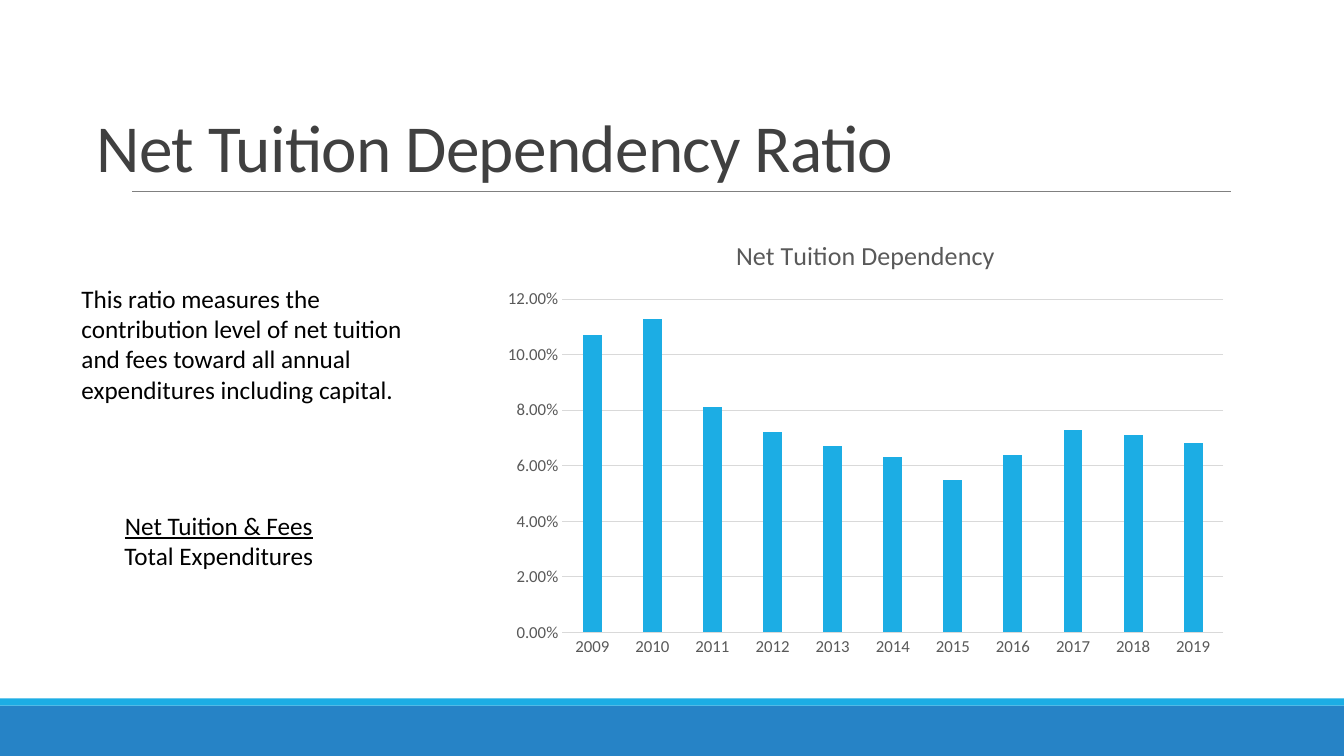
from pptx import Presentation
from pptx.chart.data import CategoryChartData
from pptx.dml.color import RGBColor
from pptx.enum.chart import XL_CHART_TYPE, XL_TICK_MARK
from pptx.enum.shapes import MSO_CONNECTOR, MSO_SHAPE
from pptx.enum.text import MSO_ANCHOR, PP_ALIGN
from pptx.oxml.ns import qn
from pptx.util import Inches, Pt
from lxml.etree import SubElement

BLUE = RGBColor(0x26, 0x83, 0xC6)
CYAN = RGBColor(0x1C, 0xAD, 0xE4)
RULE = RGBColor(0x80, 0x80, 0x80)
GRID = RGBColor(0xD9, 0xD9, 0xD9)
TITLE = RGBColor(0x40, 0x40, 0x40)
LABEL = RGBColor(0x59, 0x59, 0x59)
BLACK = RGBColor(0, 0, 0)


def style(font, size, color):
    font.name = "Calibri"
    font.size = Pt(size)
    font.color.rgb = color
    font.bold = False


def add_text(left, top, width, height, text, size, color):
    sp = s.shapes.add_textbox(Inches(left), Inches(top), Inches(width), Inches(height))
    tf = sp.text_frame
    tf.word_wrap = True
    tf.text = text
    for p in tf.paragraphs:
        style(p.runs[0].font, size, color)
    return tf


prs = Presentation()
prs.slide_width = Inches(13.33)
prs.slide_height = Inches(7.5)
s = prs.slides.add_slide(prs.slide_layouts[6])

for top, height, color in [(7, 0.5, BLUE), (6.93, 0.07, CYAN)]:
    band = s.shapes.add_shape(MSO_SHAPE.RECTANGLE, 0, Inches(top), prs.slide_width, Inches(height))
    band.shadow.inherit = False
    band.fill.solid()
    band.fill.fore_color.rgb = color
    band.line.fill.background()

rule = s.shapes.add_connector(
    MSO_CONNECTOR.STRAIGHT, Inches(1.31), Inches(1.9), Inches(12.21), Inches(1.9))
rule.line.color.rgb = RULE
rule.line.width = Pt(0.5)
SubElement(rule._element.spPr, qn("a:effectLst"))

tf = add_text(0.71, 0.31, 11, 1.59, "Net Tuition Dependency Ratio", 48, TITLE)
tf.vertical_anchor = MSO_ANCHOR.BOTTOM
tf.margin_left = Inches(0.25)
p = tf.paragraphs[0]
p.line_spacing = 0.85
p.runs[0]._r.get_or_add_rPr().set("spc", "-50")

data = CategoryChartData(number_format="0.00%")
data.categories = [str(year) for year in range(2009, 2020)]
data.add_series("Series 1", [0.107, 0.113, 0.081, 0.072, 0.067, 0.063,
                             0.055, 0.064, 0.073, 0.071, 0.068])
chart = s.shapes.add_chart(
    XL_CHART_TYPE.COLUMN_CLUSTERED, Inches(4.89), Inches(2.16),
    Inches(7.39), Inches(4.44), data).chart
style(chart.font, 10, BLACK)
chart.has_legend = False
chart.has_title = True
chart.chart_title.include_in_layout = False
chart.chart_title.text_frame.text = "Net Tuition Dependency"
style(chart.chart_title.text_frame.paragraphs[0].runs[0].font, 18.6, LABEL)

plot = chart.plots[0]
plot.vary_by_categories = False
plot.gap_width = 219
plot.overlap = -27
plot.series[0].format.fill.solid()
plot.series[0].format.fill.fore_color.rgb = CYAN

years, ratios = chart.category_axis, chart.value_axis
for axis in (years, ratios):
    style(axis.tick_labels.font, 12, LABEL)
    axis.major_tick_mark = XL_TICK_MARK.NONE
    axis.minor_tick_mark = XL_TICK_MARK.NONE
ratios.minimum_scale = 0
ratios.maximum_scale = 0.12
ratios.major_unit = 0.02
ratios.tick_labels.number_format = "0.00%"
ratios.tick_labels.number_format_is_linked = False
ratios.format.line.fill.background()
ratios.has_major_gridlines = True
for line in (years.format.line, ratios.major_gridlines.format.line):
    line.color.rgb = GRID
    line.width = Pt(0.75)

add_text(0.71, 2.76, 3.47, 1.31,
         "This ratio measures the contribution level of net tuition and fees "
         "toward all annual expenditures including capital.", 18, BLACK)

tf = add_text(0.71, 5.01, 2.92, 0.71, "Net Tuition & Fees\nTotal Expenditures", 18, BLACK)
for p in tf.paragraphs:
    p.alignment = PP_ALIGN.CENTER
tf.paragraphs[0].runs[0].font.underline = True

prs.save("out.pptx")
